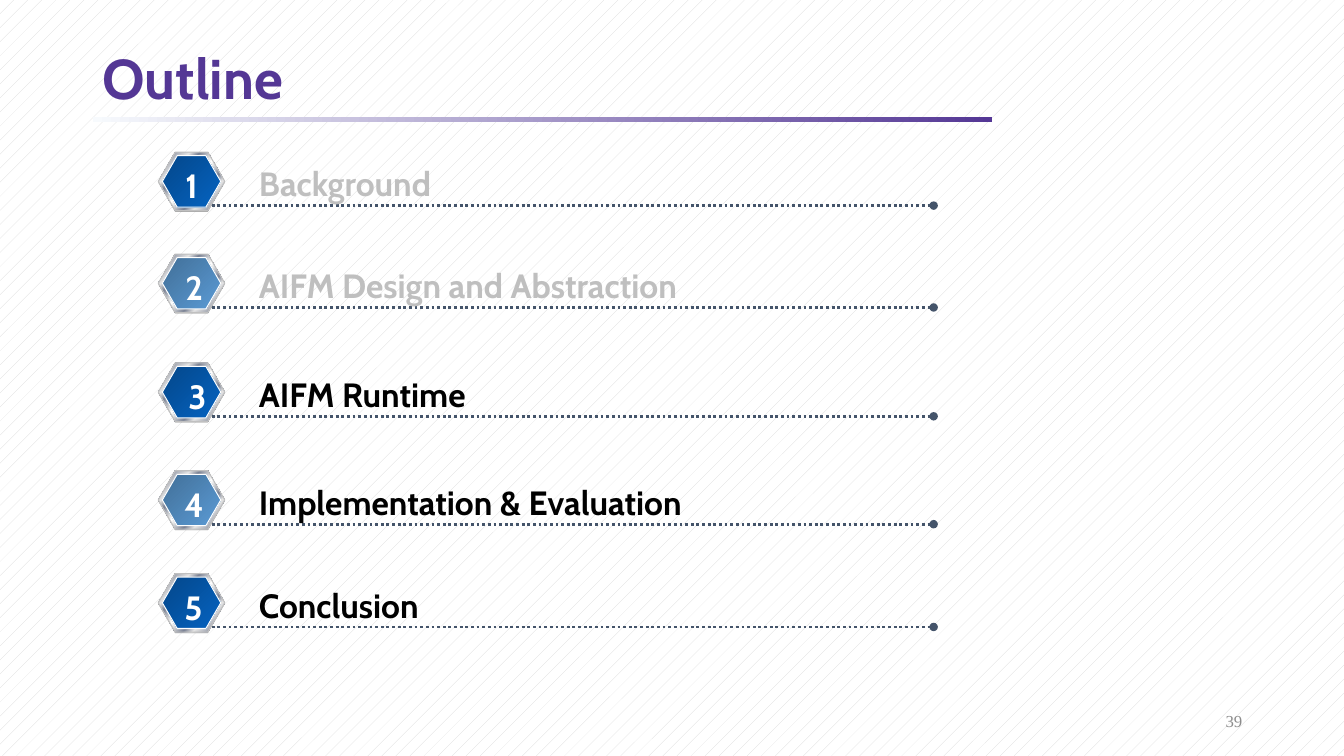
from lxml import etree
from pptx import Presentation
from pptx.dml.color import RGBColor
from pptx.enum.dml import MSO_LINE, MSO_PATTERN
from pptx.enum.shapes import MSO_CONNECTOR, MSO_SHAPE
from pptx.enum.text import MSO_ANCHOR, MSO_AUTO_SIZE, PP_ALIGN
from pptx.oxml.ns import qn
from pptx.util import Inches, Pt

HEX, RECT = MSO_SHAPE.HEXAGON, MSO_SHAPE.RECTANGLE
LEFT, MID, RIGHT = PP_ALIGN.LEFT, PP_ALIGN.CENTER, PP_ALIGN.RIGHT
TOP, CENTER = MSO_ANCHOR.TOP, MSO_ANCHOR.MIDDLE
DOTS, STRAIGHT = MSO_LINE.ROUND_DOT, MSO_CONNECTOR.STRAIGHT
SPECKLE, GROW = MSO_PATTERN.PERCENT_5, MSO_AUTO_SIZE.SHAPE_TO_FIT_TEXT

WHITE = RGBColor(0xFF, 0xFF, 0xFF)
BLACK = RGBColor(0, 0, 0)
PALE = RGBColor(0xD9, 0xD9, 0xD9)
FADED = RGBColor(0xBF, 0xBF, 0xBF)
GRAY = RGBColor(0x80, 0x80, 0x80)
FOLIO = RGBColor(0x8C, 0x8C, 0x8C)
EDGE = RGBColor(0xC0, 0xC0, 0xC0)
SLATE = RGBColor(0x44, 0x54, 0x6A)
PURPLE = RGBColor(0x54, 0x37, 0x95)
MIST = RGBColor(0xF7, 0xFA, 0xFD)
LIGHT = RGBColor(0xE6, 0xE6, 0xE6)
STEEL = RGBColor(0x7D, 0x84, 0x96)

# Gradients as (percent, colour) stops
RULE = [(0, MIST), (100, PURPLE)]
DEEP = [(0, RGBColor(0x04, 0x47, 0x8A)), (100, RGBColor(0x05, 0x63, 0xC1))]
SOFT = [(0, RGBColor(0x41, 0x6F, 0x98)), (100, RGBColor(0x5B, 0x9B, 0xD5))]
METAL = [(0, LIGHT), (7, STEEL), (26, LIGHT), (34, STEEL), (46, LIGHT),
         (50, WHITE), (54, LIGHT), (66, STEEL), (74, LIGHT), (93, STEEL),
         (100, LIGHT)]

# Topic, label width, colour, row of its dotted line, middle of its number
TOPICS = [
    ("Background", 20.8, FADED, 20.4, 19),
    ("AIFM Design and Abstraction", 48.3, FADED, 30.5, 19),
    ("AIFM Runtime", 25.3, BLACK, 41.3, 19.3),
    ("Implementation & Evaluation", 48.5, BLACK, 52, 18.9),
    ("Conclusion", 19.4, BLACK, 62.2, 18.9),
]

# The grid has 75 rows, with square cells
WIDE, HIGH = Inches(13.33), Inches(7.5)
CELL = HIGH / 75


def grid(*cells):
    return [round(cell * CELL) for cell in cells]


def blend(shape, stops, angle):
    shape.fill.gradient()
    shape.fill.gradient_angle = angle
    ramp = shape._element.spPr.find(".//" + qn("a:gsLst"))
    for stop in list(ramp):
        ramp.remove(stop)
    for share, color in stops:
        stop = etree.SubElement(ramp, qn("a:gs"), pos=str(share * 1000))
        etree.SubElement(stop, qn("a:srgbClr"), val=str(color))


def block(shapes, kind, box, paint, angle=0, edge=None):
    shape = shapes.add_shape(kind, *grid(*box))
    shape.shadow.inherit = False
    if isinstance(paint, RGBColor):
        shape.fill.solid()
        shape.fill.fore_color.rgb = paint
    else:
        blend(shape, paint, angle)
    if edge is None:
        shape.line.fill.background()
    else:
        shape.line.color.rgb = edge
        shape.line.width = Pt(0.75)
    return shape


def badge(slide, row, paint):
    shapes = slide.shapes.add_group_shape().shapes
    layers = [((15.7, row - 5.2, 6.6, 5.8), GRAY, None),
              ((15.7, row - 5.3, 6.6, 5.8), METAL, EDGE),
              ((16.1, row - 4.95, 5.8, 5.1), paint, WHITE)]
    for box, fill, edge in layers:
        shape = block(shapes, HEX, box, fill, 315, edge)
        shape.adjustments[0] = 0.289
        shape.adjustments[1] = 1.155


def leader(slide, row):
    line = slide.shapes.add_connector(STRAIGHT, *grid(21, row, 92.6, row))
    line.line.color.rgb = SLATE
    line.line.width = Pt(2)
    line.line.dash_style = DOTS
    etree.SubElement(line.line._get_or_add_ln(), qn("a:tailEnd"), type="oval")
    etree.SubElement(line._element.spPr, qn("a:effectLst"))


def write(slide, text, box, size, color, align=LEFT, anchor=TOP,
          face="Cabin", bold=True, wrap=False):
    shape = slide.shapes.add_textbox(*grid(*box))
    frame = shape.text_frame
    frame.text = text
    frame.word_wrap = wrap
    frame.vertical_anchor = anchor
    if not wrap:
        frame.auto_size = GROW
    para = frame.paragraphs[0]
    para.alignment = align
    font = para.runs[0].font
    font.name, font.size, font.bold = face, Pt(size), bold
    font.color.rgb = color
    return para


def main():
    deck = Presentation()
    deck.slide_width, deck.slide_height = WIDE, HIGH
    slide = deck.slides.add_slide(deck.slide_layouts[6])

    # Background
    back = slide.background.fill
    back.patterned()
    back.pattern = SPECKLE
    back.fore_color.rgb = PALE
    back.back_color.rgb = WHITE

    # Title, rule and page number
    block(slide.shapes, RECT, (9.2, 11.6, 89.2, 0.55), RULE)
    title = write(slide, "Outline", (9.2, 4.3, 115, 7.5), 40, PURPLE,
                  anchor=CENTER, wrap=True)
    title.line_spacing = 0.9
    write(slide, "39", (94.2, 69.5, 30, 4), 12, FOLIO, RIGHT, CENTER,
          "Times New Roman", False, True)

    # Topics, with badges in alternating blues
    for index, (topic, width, color, row, mid) in enumerate(TOPICS):
        badge(slide, row, SOFT if index % 2 else DEEP)
        leader(slide, row)
        write(slide, topic, (24.7, row - 4.7, width, 5), 24, color)
        write(slide, str(index + 1), (mid - 1.6, row - 4.5, 3.2, 5),
              24, WHITE, MID)

    deck.save("out.pptx")


if __name__ == "__main__":
    main()
